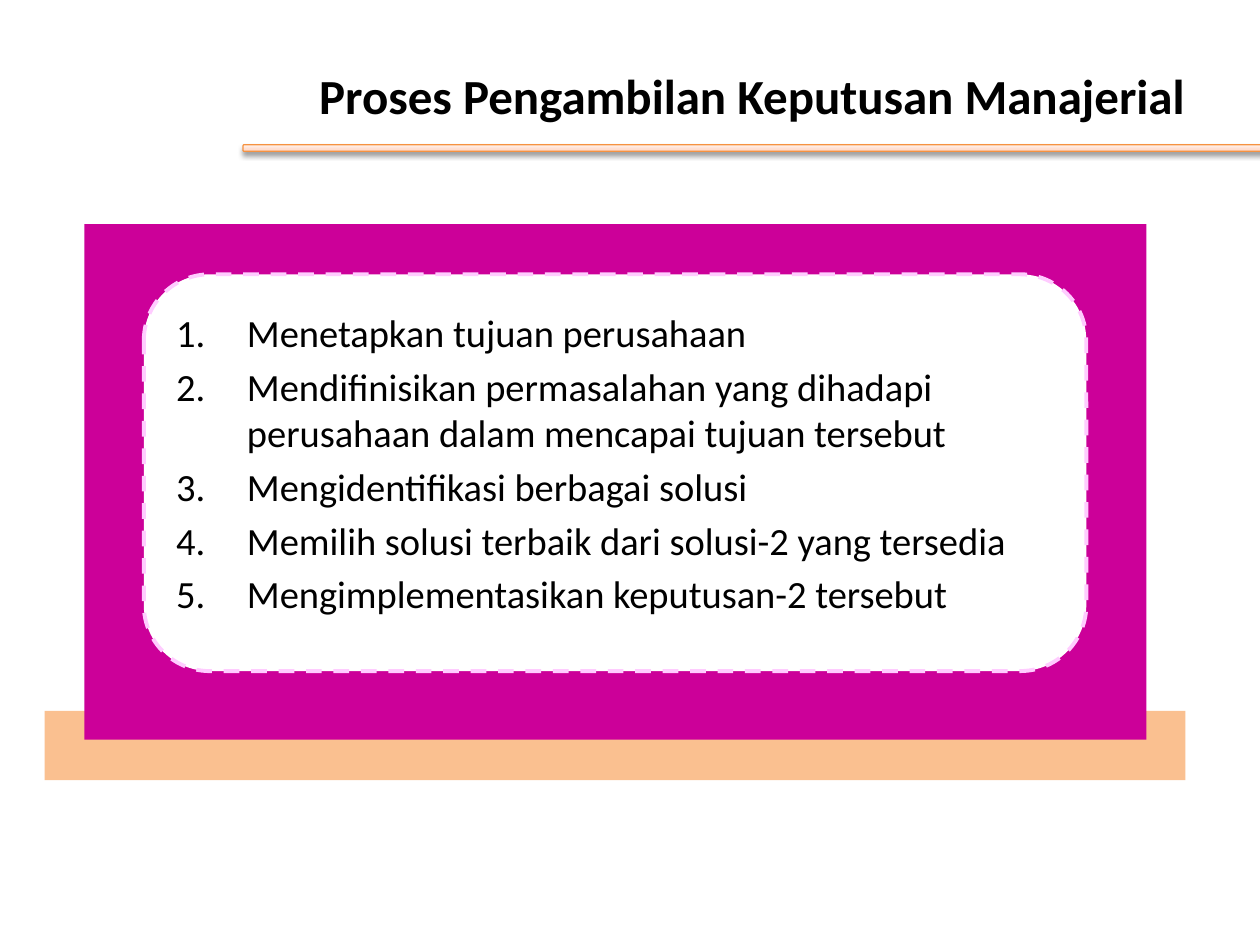
from dataclasses import dataclass
from typing import Optional

from lxml.etree import SubElement
from pptx import Presentation
from pptx.dml.color import RGBColor
from pptx.enum.dml import MSO_LINE
from pptx.enum.shapes import MSO_SHAPE
from pptx.enum.text import MSO_ANCHOR, PP_ALIGN
from pptx.oxml.ns import qn
from pptx.util import Cm, Pt

BLACK = RGBColor(0x00, 0x00, 0x00)
WHITE = RGBColor(0xFF, 0xFF, 0xFF)
PEACH = RGBColor(0xFA, 0xC0, 0x90)
MAGENTA = RGBColor(0xCC, 0x00, 0x99)
PINK = RGBColor(0xFF, 0xCC, 0xFF)
ORANGE = RGBColor(0xF6, 0x92, 0x40)
RULE_STOPS = (
    (0, RGBColor(0xFF, 0xD2, 0xBD)),
    (35, RGBColor(0xFF, 0xDE, 0xD0)),
    (100, RGBColor(0xFF, 0xF2, 0xED)),
)

TITLE = "Proses Pengambilan Keputusan Manajerial"
STEPS = (
    "Menetapkan tujuan perusahaan",
    "Mendifinisikan permasalahan yang dihadapi perusahaan dalam mencapai tujuan tersebut",
    "Mengidentifikasi berbagai solusi",
    "Memilih solusi terbaik dari solusi-2 yang tersedia",
    "Mengimplementasikan keputusan-2 tersebut",
)
TITLE_FORMAT = {"name": "Calibri", "size": Pt(28), "bold": True}
STEP_FORMAT = {"name": "Calibri", "size": Pt(22), "bold": False}
STEP_INDENT = Cm(1.43)


@dataclass
class Box:
    """Position and size in centimetres."""
    left: float
    top: float
    width: float
    height: float

    def lengths(self) -> tuple:
        return Cm(self.left), Cm(self.top), Cm(self.width), Cm(self.height)


@dataclass
class Panel:
    box: Box
    preset: MSO_SHAPE
    fill: Optional[RGBColor] = None
    line: Optional[RGBColor] = None
    line_width: float = 0
    dash: Optional[MSO_LINE] = None


BACK_PANELS = (
    Panel(Box(0.9, 14.33, 23, 1.4), MSO_SHAPE.RECTANGLE, PEACH),
    Panel(Box(1.7, 4.52, 21.41, 10.39), MSO_SHAPE.RECTANGLE, MAGENTA),
    Panel(Box(2.9, 5.53, 19, 8), MSO_SHAPE.ROUNDED_RECTANGLE, WHITE, PINK, 2.25, MSO_LINE.DASH),
)
TITLE_RULE = Panel(Box(4.9, 2.92, 21.23, 0.13), MSO_SHAPE.ROUNDED_RECTANGLE, None, ORANGE, 0.75)
TITLE_BOX = Box(1.27, 0.76, 22.86, 2.29)
STEPS_BOX = Box(3.3, 6.1, 18.24, 7.47)


def add_panel(slide, panel: Panel):
    shape = slide.shapes.add_shape(panel.preset, *panel.box.lengths())
    shape.shadow.inherit = False
    if panel.fill is not None:
        shape.fill.solid()
        shape.fill.fore_color.rgb = panel.fill
    if panel.line is None:
        shape.line.fill.background()
    else:
        shape.line.color.rgb = panel.line
        shape.line.width = Pt(panel.line_width)
        if panel.dash is not None:
            shape.line.dash_style = panel.dash
    return shape


def add_color(parent, color: RGBColor):
    return SubElement(parent, qn("a:srgbClr"), val=str(color))


def add_title_rule(slide) -> None:
    shape = add_panel(slide, TITLE_RULE)
    # Three-stop gradient running upwards
    shape.fill.gradient()
    shape.fill.gradient_angle = 90
    properties = shape._element.spPr
    stops = properties.find(qn("a:gradFill")).find(qn("a:gsLst"))
    for stop in list(stops):
        stops.remove(stop)
    for percent, color in RULE_STOPS:
        add_color(SubElement(stops, qn("a:gs"), pos=str(percent * 1000)), color)
    # Soft shadow below
    shadow = SubElement(
        properties.find(qn("a:effectLst")), qn("a:outerShdw"),
        blurRad=str(Pt(3.1)), dist=str(Pt(1.6)), dir="5400000", rotWithShape="0",
    )
    SubElement(add_color(shadow, BLACK), qn("a:alpha"), val="38000")


def add_text_frame(slide, box: Box, anchor: MSO_ANCHOR):
    text_frame = slide.shapes.add_textbox(*box.lengths()).text_frame
    text_frame.word_wrap = True
    text_frame.vertical_anchor = anchor
    return text_frame


def format_font(paragraph, font_format: dict) -> None:
    for name, value in font_format.items():
        setattr(paragraph.font, name, value)
    paragraph.font.color.rgb = BLACK


def add_title(slide) -> None:
    paragraph = add_text_frame(slide, TITLE_BOX, MSO_ANCHOR.MIDDLE).paragraphs[0]
    paragraph.text = TITLE
    paragraph.alignment = PP_ALIGN.RIGHT
    format_font(paragraph, TITLE_FORMAT)


def add_steps(slide) -> None:
    text_frame = add_text_frame(slide, STEPS_BOX, MSO_ANCHOR.TOP)
    for index, step in enumerate(STEPS):
        paragraph = text_frame.add_paragraph() if index else text_frame.paragraphs[0]
        paragraph.text = step
        if index:
            paragraph.space_before = Pt(4.4)
        properties = paragraph._p.get_or_add_pPr()
        properties.set("marL", str(STEP_INDENT))
        properties.set("indent", str(-STEP_INDENT))
        SubElement(properties, qn("a:buFont"), typeface="+mj-lt")
        SubElement(properties, qn("a:buAutoNum"), type="arabicPeriod")
        format_font(paragraph, STEP_FORMAT)


def main() -> None:
    presentation = Presentation()
    presentation.slide_width = Cm(25.4)
    presentation.slide_height = Cm(19.05)
    slide = presentation.slides.add_slide(presentation.slide_layouts[6])

    # Background panels, back to front
    for panel in BACK_PANELS:
        add_panel(slide, panel)

    # Title, numbered steps and the line under the title
    add_title(slide)
    add_steps(slide)
    add_title_rule(slide)

    presentation.save("out.pptx")


if __name__ == "__main__":
    main()
